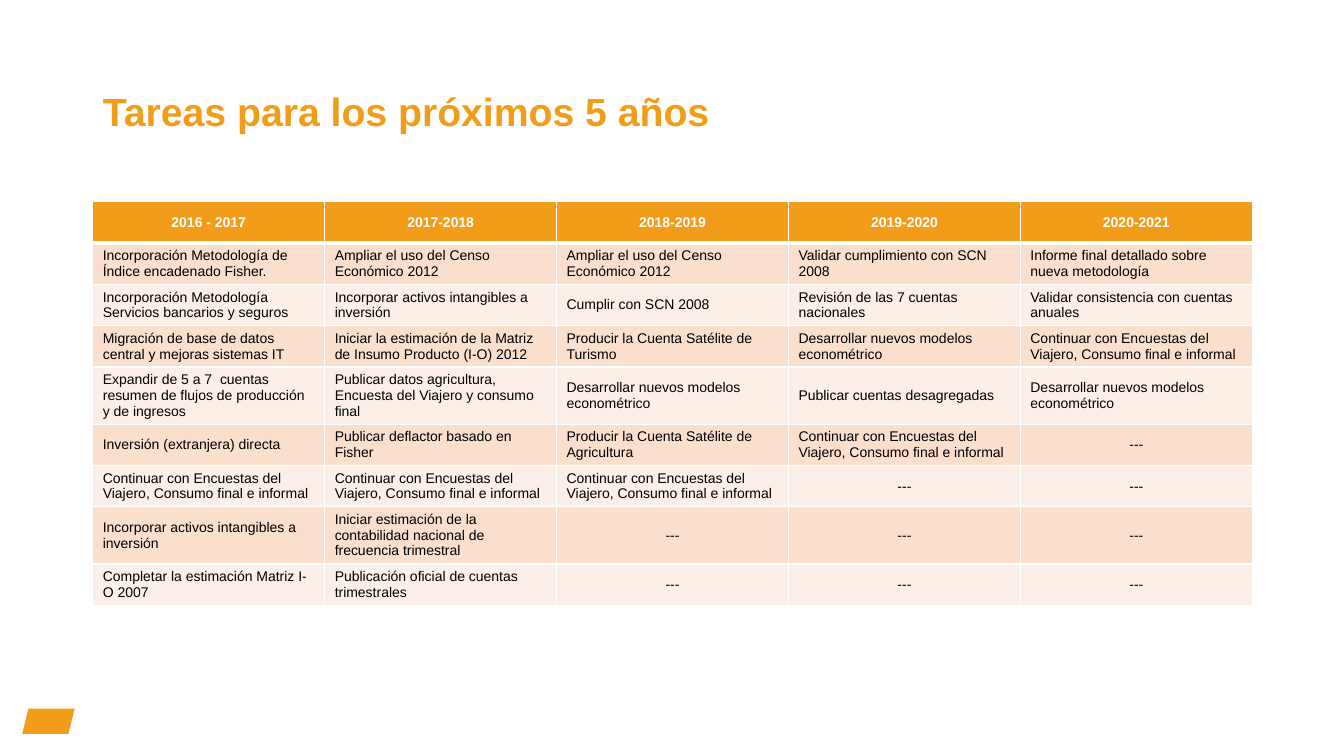
import itertools

import pptx
import pptx.dml.color
import pptx.enum.shapes
import pptx.enum.text
import pptx.oxml
import pptx.oxml.ns
import pptx.util

# Content
HEADING = "Tareas para los próximos 5 años"
SURVEYS = "Continuar con Encuestas del Viajero, Consumo final e informal"
INTANGIBLES = "Incorporar activos intangibles a inversión"
CENSUS = "Ampliar el uso del Censo Económico 2012"
MODELS = "Desarrollar nuevos modelos econométrico"
NO_TASK = "---"
TASKS_BY_YEAR = {
    "2016 - 2017": [
        "Incorporación Metodología de Índice encadenado Fisher.",
        "Incorporación Metodología Servicios bancarios y seguros",
        "Migración de base de datos central y mejoras sistemas IT",
        "Expandir de 5 a 7  cuentas resumen de flujos de producción y de ingresos",
        "Inversión (extranjera) directa",
        SURVEYS,
        INTANGIBLES,
        "Completar la estimación Matriz I-O 2007",
    ],
    "2017-2018": [
        CENSUS,
        INTANGIBLES,
        "Iniciar la estimación de la Matriz  de Insumo Producto (I-O) 2012",
        "Publicar datos agricultura, Encuesta del Viajero y consumo final",
        "Publicar deflactor basado en Fisher",
        SURVEYS,
        "Iniciar estimación de la contabilidad nacional de frecuencia trimestral",
        "Publicación oficial de cuentas trimestrales",
    ],
    "2018-2019": [
        CENSUS,
        "Cumplir con SCN 2008",
        "Producir la Cuenta Satélite de Turismo",
        MODELS,
        "Producir la Cuenta Satélite de Agricultura",
        SURVEYS,
    ],
    "2019-2020": [
        "Validar cumplimiento con SCN 2008",
        "Revisión de las 7 cuentas nacionales",
        MODELS,
        "Publicar cuentas desagregadas",
        SURVEYS,
    ],
    "2020-2021": [
        "Informe final detallado sobre nueva metodología",
        "Validar consistencia con cuentas anuales",
        SURVEYS,
        MODELS,
    ],
}
COLORS = {"accent": "F19D19", "odd": "FADFCC", "even": "FCEFE8",
          "white": "FFFFFF", "black": "000000"}
FONT = "Arial"

# Grid, in inches
SLIDE_W, SLIDE_H = 13.33, 7.5
LEFT, CONTENT_W = 0.92, 11.5
TITLE_TOP, TITLE_H = 0.4, 1.45
TABLE_TOP, ROW_H = 2, 0.41
COLUMN_W = CONTENT_W / len(TASKS_BY_YEAR)

ALIGN = pptx.enum.text.PP_ALIGN
MIDDLE = pptx.enum.text.MSO_ANCHOR.MIDDLE


def inches(*lengths):
    return [pptx.util.Inches(length) for length in lengths]


def paint(fill, color):
    fill.solid()
    fill.fore_color.rgb = pptx.dml.color.RGBColor.from_string(COLORS[color])


def write(frame, text, size=10, color="black", bold=False, align=ALIGN.LEFT, spacing=None):
    paragraph = frame.paragraphs[0]
    paragraph.alignment = align
    paragraph.line_spacing = spacing
    run = paragraph.add_run()
    run.text = text
    run.font.name = FONT
    run.font.size = pptx.util.Pt(size)
    run.font.bold = bold
    run.font.color.rgb = pptx.dml.color.RGBColor.from_string(COLORS[color])


def add_borders(cell, **widths):
    properties = cell._tc.get_or_add_tcPr()
    for side, width in widths.items():
        properties.append(pptx.oxml.parse_xml(
            f'<a:ln{side} {pptx.oxml.ns.nsdecls("a")} w="{pptx.util.Pt(width)}">'
            f'<a:solidFill><a:srgbClr val="{COLORS["white"]}"/></a:solidFill></a:ln{side}>'))


def add_heading(slide):
    title = slide.shapes.title
    title.left, title.top, title.width, title.height = inches(
        LEFT, TITLE_TOP, CONTENT_W, TITLE_H)
    title.text_frame.vertical_anchor = MIDDLE
    title.text_frame.word_wrap = True
    write(title.text_frame, HEADING, size=28, color="accent", bold=True, spacing=0.9)


def add_schedule(slide):
    tasks = itertools.zip_longest(*TASKS_BY_YEAR.values(), fillvalue=NO_TASK)
    rows = [tuple(TASKS_BY_YEAR), *tasks]
    schedule = slide.shapes.add_table(
        len(rows), len(TASKS_BY_YEAR),
        *inches(LEFT, TABLE_TOP, CONTENT_W, ROW_H * len(rows))).table
    for column in schedule.columns:
        column.width = pptx.util.Inches(COLUMN_W)
    for r, row in enumerate(rows):
        schedule.rows[r].height = pptx.util.Inches(ROW_H)
        header = r == 0
        band = "accent" if header else "odd" if r % 2 else "even"
        for c, text in enumerate(row):
            cell = schedule.cell(r, c)
            add_borders(cell, L=1, R=1, T=3 if r == 1 else 1, B=3 if header else 1)
            paint(cell.fill, band)
            cell.vertical_anchor = MIDDLE
            centered = header or text == NO_TASK
            write(cell.text_frame, text, bold=header,
                  color="white" if header else "black",
                  align=ALIGN.CENTER if centered else ALIGN.LEFT)


def add_corner_mark(slide):
    mark = slide.shapes.add_shape(
        pptx.enum.shapes.MSO_SHAPE.PARALLELOGRAM, *inches(0.22, 7.03, 0.52, 0.25))
    mark.shadow.inherit = False
    paint(mark.fill, "accent")
    mark.line.fill.background()


def main():
    deck = pptx.Presentation()
    deck.slide_width, deck.slide_height = inches(SLIDE_W, SLIDE_H)
    slide = deck.slides.add_slide(deck.slide_layouts.get_by_name("Title Only"))
    add_corner_mark(slide)
    add_heading(slide)
    add_schedule(slide)
    deck.save("out.pptx")


if __name__ == "__main__":
    main()
